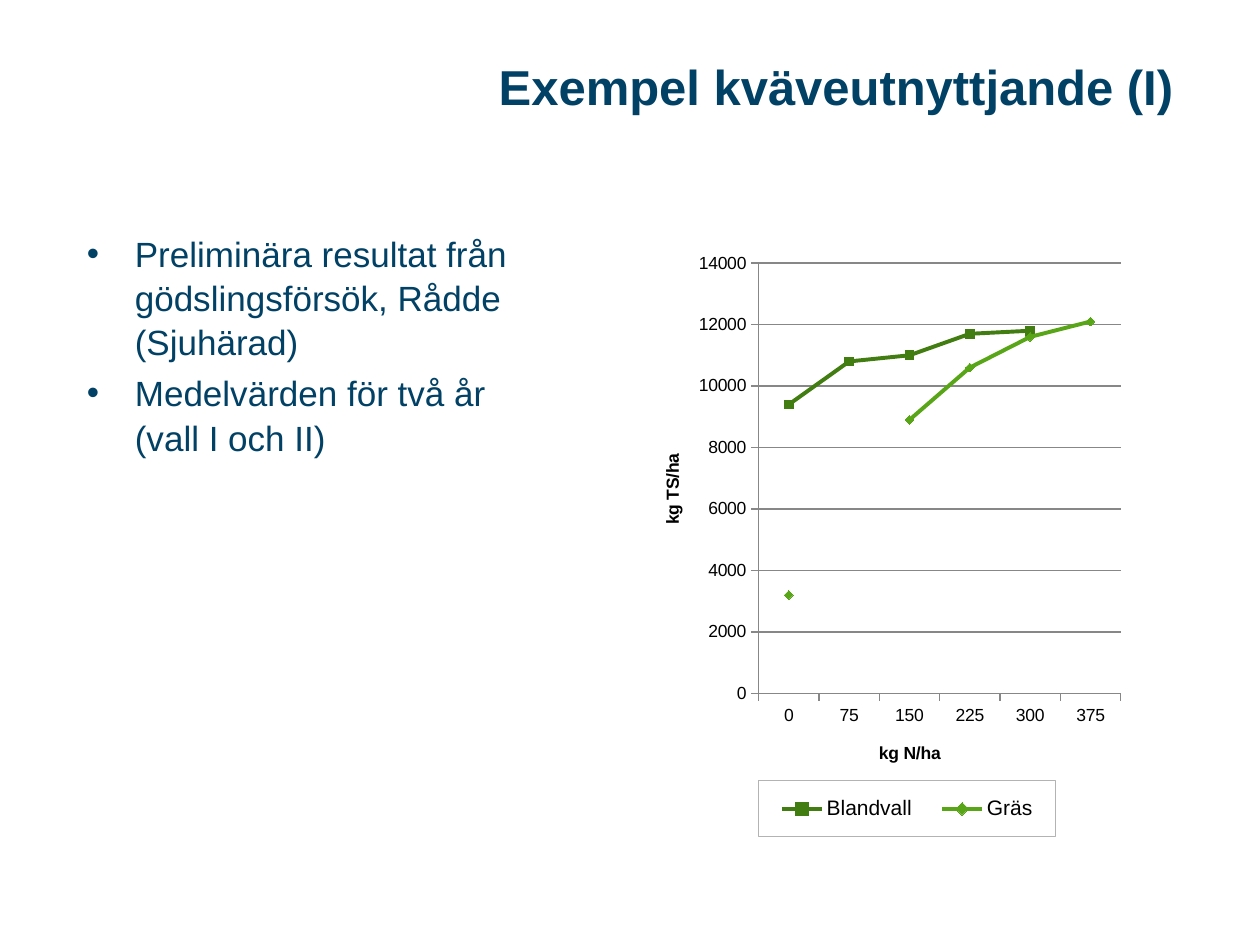
from dataclasses import dataclass
from typing import Optional

from lxml import etree
from pptx import Presentation
from pptx.chart.data import CategoryChartData
from pptx.dml.color import RGBColor
from pptx.enum.chart import (XL_CHART_TYPE, XL_LEGEND_POSITION,
                             XL_MARKER_STYLE, XL_TICK_MARK)
from pptx.enum.text import MSO_ANCHOR, PP_ALIGN
from pptx.oxml.ns import qn
from pptx.util import Inches, Pt

LINE_MARKERS = XL_CHART_TYPE.LINE_MARKERS
LEGEND_RIGHT = XL_LEGEND_POSITION.RIGHT
SQUARE, DIAMOND = XL_MARKER_STYLE.SQUARE, XL_MARKER_STYLE.DIAMOND
TICK_OUT = XL_TICK_MARK.OUTSIDE
MIDDLE, TOP = MSO_ANCHOR.MIDDLE, MSO_ANCHOR.TOP
LEFT, RIGHT = PP_ALIGN.LEFT, PP_ALIGN.RIGHT

FONT = "Arial"
COLORS = {"text": "004165", "black": "000000", "grid": "878787",
          "border": "B3B3B3", "blandvall": "427D12", "gras": "58A618"}


@dataclass
class LineSeries:
    name: str
    values: tuple[Optional[int], ...]
    color: str
    marker: XL_MARKER_STYLE


CATEGORIES = ("0", "75", "150", "225", "300", "375")
SERIES = (
    LineSeries("Blandvall", (9400, 10800, 11000, 11700, 11800, None),
               "blandvall", SQUARE),
    LineSeries("Gräs", (3200, None, 8900, 10600, 11600, 12100),
               "gras", DIAMOND),
)


def rgb(name: str) -> RGBColor:
    return RGBColor.from_string(COLORS[name])


def style_font(font, size: float, color: str, bold: bool = False) -> None:
    font.name, font.size, font.bold = FONT, Pt(size), bold
    font.color.rgb = rgb(color)


def place(sp, left: float, top: float, width: float, height: float) -> None:
    sp.left, sp.top = Inches(left), Inches(top)
    sp.width, sp.height = Inches(width), Inches(height)


def add_bullet(p, indent: float) -> None:
    pPr = p._p.get_or_add_pPr()
    pPr.set("marL", str(Inches(indent)))
    pPr.set("indent", str(-Inches(indent)))
    etree.SubElement(pPr, qn("a:buFont"), typeface=FONT)
    etree.SubElement(pPr, qn("a:buChar"), char="•")


def write(tf, *texts: str, size: float, color: str = "text", bold: bool = False,
          align=LEFT, anchor=TOP, bullets: bool = False, gap: float = 0,
          spacing: float = 1.0) -> None:
    tf.word_wrap, tf.vertical_anchor = True, anchor
    for i, text in enumerate(texts):
        p = tf.paragraphs[0] if i == 0 else tf.add_paragraph()
        p.alignment, p.line_spacing = align, spacing
        p.space_before = Pt(gap if i else 0)
        if bullets:
            add_bullet(p, 0.38)
        r = p.add_run()
        r.text = text
        style_font(r.font, size, color, bold)


def set_layout(parent, x: float, y: float, w: float, h: float,
               inner: bool = False) -> None:
    """Fix a chart part's place, in fractions of the chart."""
    layout = parent.find(qn("c:layout"))
    if layout is None:
        layout = etree.Element(qn("c:layout"))
        before = parent.find(qn("c:legendPos"))
        if before is None:
            parent.insert(0, layout)
        else:
            before.addnext(layout)
    manual = etree.SubElement(layout, qn("c:manualLayout"))
    settings = [("layoutTarget", "inner")] if inner else []
    settings += [("xMode", "edge"), ("yMode", "edge"),
                 ("x", x), ("y", y), ("w", w), ("h", h)]
    for tag, value in settings:
        etree.SubElement(manual, qn(f"c:{tag}"), val=str(value))


def style_axis(axis, title: str) -> None:
    axis.major_tick_mark = TICK_OUT
    axis.format.line.color.rgb = rgb("grid")
    axis.format.line.width = Pt(0.75)
    style_font(axis.tick_labels.font, 10, "black")
    tf = axis.axis_title.text_frame
    tf.text = title
    style_font(tf.paragraphs[0].runs[0].font, 10, "black", bold=True)


def style_series(series, item: LineSeries) -> None:
    series.smooth = False
    series.format.line.color.rgb = rgb(item.color)
    series.format.line.width = Pt(2.25)
    series.marker.style, series.marker.size = item.marker, 5
    fmt = series.marker.format
    fmt.fill.solid()
    fmt.fill.fore_color.rgb = rgb(item.color)
    fmt.line.color.rgb = rgb(item.color)


def add_border(legend) -> None:
    spPr = etree.Element(qn("c:spPr"))
    ln = etree.SubElement(spPr, qn("a:ln"), w=str(Pt(0.5)))
    fill = etree.SubElement(ln, qn("a:solidFill"))
    etree.SubElement(fill, qn("a:srgbClr"), val=COLORS["border"])
    legend._element.find(qn("c:txPr")).addprevious(spPr)


def add_yield_chart(slide) -> None:
    data = CategoryChartData(number_format="General")
    data.categories = CATEGORIES
    for item in SERIES:
        data.add_series(item.name, item.values)
    chart = slide.shapes.add_chart(
        LINE_MARKERS, Inches(5.12), Inches(1.94), Inches(4.29), Inches(4.95),
        data).chart
    style_font(chart.font, 10, "black")
    chart.has_title = False
    plot = chart.plots[0]
    plot.vary_by_categories = False
    for series, item in zip(plot.series, SERIES):
        style_series(series, item)

    style_axis(chart.category_axis, "kg N/ha")
    axis = chart.value_axis
    style_axis(axis, "kg TS/ha")
    axis.minimum_scale, axis.maximum_scale, axis.major_unit = 0, 14000, 2000
    axis.has_major_gridlines = True
    axis.major_gridlines.format.line.color.rgb = rgb("grid")
    axis.major_gridlines.format.line.width = Pt(0.75)

    chart.has_legend = True
    legend = chart.legend
    legend.position, legend.include_in_layout = LEGEND_RIGHT, False
    style_font(legend.font, 12, "black")
    add_border(legend)
    set_layout(legend._element, 0.21, 0.86, 0.55, 0.09)
    set_layout(plot._element.getparent(), 0.21, 0.03, 0.67, 0.69, inner=True)


def main() -> None:
    prs = Presentation()
    prs.slide_width, prs.slide_height = Inches(10), Inches(7.5)
    slide = prs.slides.add_slide(prs.slide_layouts[1])
    title, body = slide.placeholders
    place(title, 2.13, 0.39, 7.28, 0.59)
    write(title.text_frame, "Exempel kväveutnyttjande (I)", size=28, bold=True,
          align=RIGHT, anchor=MIDDLE)
    place(body, 0.59, 1.78, 3.7, 5.11)
    write(body.text_frame,
          "Preliminära resultat från gödslingsförsök, Rådde (Sjuhärad)",
          "Medelvärden för två år (vall I och II)",
          size=20, bullets=True, gap=4, spacing=1.05)
    add_yield_chart(slide)
    prs.save("out.pptx")


if __name__ == "__main__":
    main()
